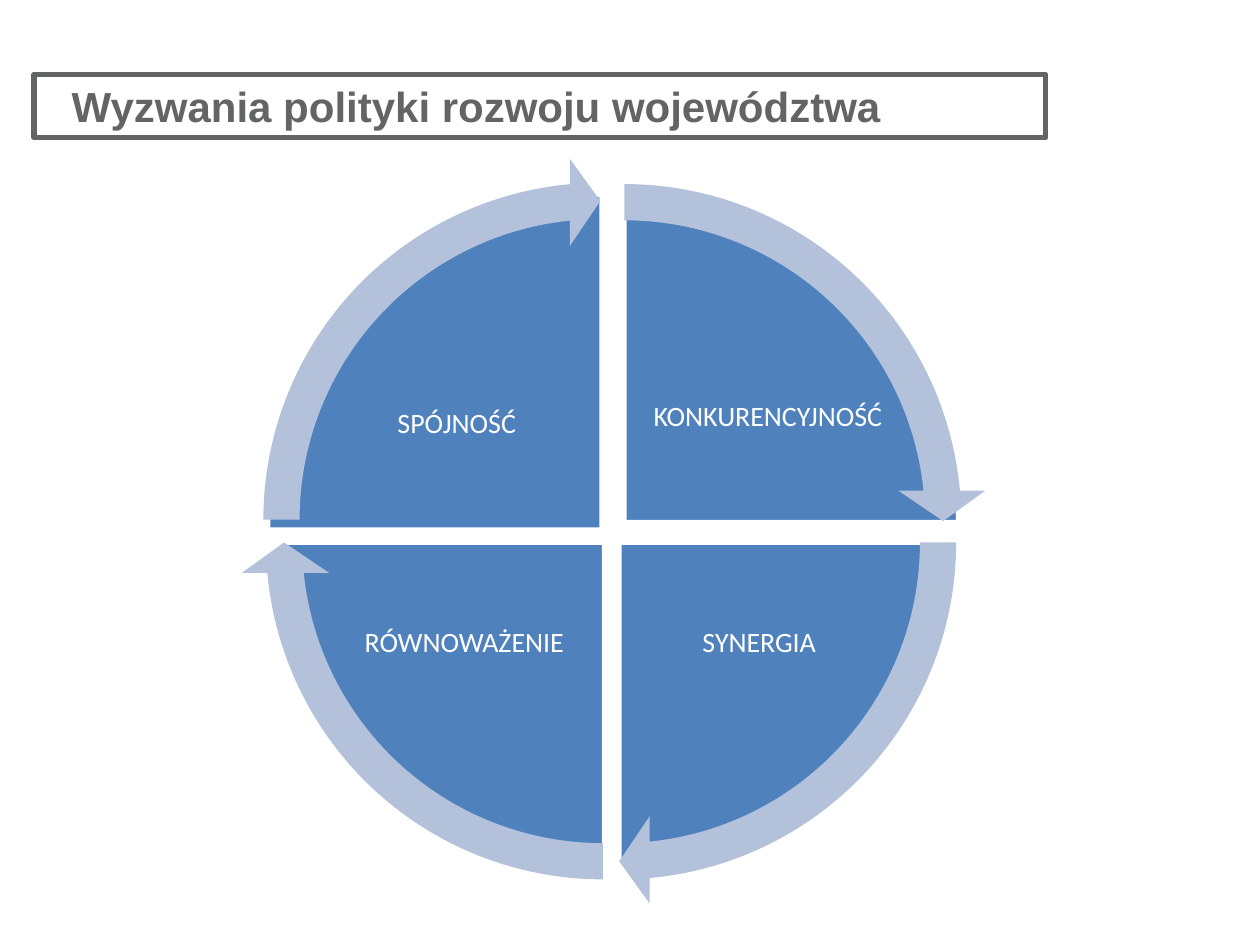
import pptx
import pptx.util
import pptx.dml.color
from dataclasses import dataclass
from pptx.enum.shapes import MSO_SHAPE
from pptx.enum.text import MSO_ANCHOR, PP_ALIGN

Pt = pptx.util.Pt


@dataclass(frozen=True)
class Theme:
    quadrant: str = "4F81BD"
    arrow: str = "B3C1DB"
    heading: str = "636466"
    light: str = "FFFFFF"
    title_font: str = "Arial"
    label_font: str = "Calibri"
    title_size: float = 24
    label_size: float = 16


THEME = Theme()
QUARTER = 54  # 90 degrees in adjustment units
ARROW_SIZE = 414

# Offsets within the cycle box: pie (left, top, width, height),
# label (left, top, width, height), arrow (left, top); clockwise from top right.
QUADRANTS = [
    ("KONKURENCYJNOŚĆ", (31, 17.3, 380.2, 381.6), (232.6, 96.5, 140.4, 104.4), (13.8, 0.7)),
    ("SYNERGIA", (33.9, 36, 368.6, 368.6), (229.8, 227.5, 136.1, 100.8), (10.9, 13)),
    ("RÓWNOWAŻENIE", (24.6, 36, 368.6, 368.6), (61.3, 227.5, 136.1, 100.8), (1.5, 13)),
    ("SPÓJNOŚĆ", (17.4, 21.6, 380.2, 381.6), (54.8, 100.1, 140.4, 104.4), (0, 0)),
]


def rgb(value):
    return pptx.dml.color.RGBColor.from_string(value)


def write(tf, text, *, font, size, color, bold=False, align=PP_ALIGN.CENTER,
          anchor=MSO_ANCHOR.MIDDLE, spacing=1.0, after=0, indent=0, inset=None):
    tf.word_wrap = True
    tf.vertical_anchor = anchor
    if inset is not None:
        tf.margin_left = tf.margin_right = tf.margin_top = tf.margin_bottom = Pt(inset)
    p = tf.paragraphs[0]
    p.alignment, p.line_spacing, p.space_after = align, spacing, Pt(after)
    if indent:
        pPr = p._p.get_or_add_pPr()
        pPr.set("marL", str(Pt(indent)))
        pPr.set("indent", "0")
    r = p.add_run()
    r.text = text
    r.font.name, r.font.size, r.font.bold = font, Pt(size), bold
    r.font.color.rgb = rgb(color)


def add_shape(shapes, kind, box, fill=None, line=None, width=0, adjustments=()):
    sp = shapes.add_shape(kind, *map(Pt, box))
    sp.shadow.inherit = False
    for i, value in enumerate(adjustments):
        sp.adjustments[i] = value
    if fill:
        sp.fill.solid()
        sp.fill.fore_color.rgb = rgb(fill)
    else:
        sp.fill.background()
    if line:
        sp.line.color.rgb = rgb(line)
        sp.line.width = Pt(width)
    else:
        sp.line.fill.background()
    return sp


def add_title(s, box, text):
    sp = add_shape(s.shapes, MSO_SHAPE.RECTANGLE, box, line=THEME.heading, width=3)
    write(sp.text_frame, text, font=THEME.title_font, size=THEME.title_size,
          color=THEME.heading, bold=True, align=PP_ALIGN.JUSTIFY,
          anchor=MSO_ANCHOR.TOP, after=6, indent=14.4)


def add_cycle(s, left, top, quadrants):
    """Four labelled quarter pies, with a ring of clockwise arrows above them."""
    shapes = s.shapes.add_group_shape().shapes

    def place(x, y, w, h):
        return left + x, top + y, w, h

    starts = [(3 + i) % 4 * QUARTER for i in range(len(quadrants))]
    for start, (text, pie, label, _) in zip(starts, quadrants):
        end = (start + QUARTER) % (4 * QUARTER)
        add_shape(shapes, MSO_SHAPE.PIE, place(*pie), fill=THEME.quadrant,
                  line=THEME.light, width=2, adjustments=(start, end))
        tb = shapes.add_textbox(*map(Pt, place(*label)))
        write(tb.text_frame, text, font=THEME.label_font, size=THEME.label_size,
              color=THEME.light, spacing=0.9, inset=1.6)
    for start, (_, _, _, corner) in zip(starts, quadrants):
        add_shape(shapes, MSO_SHAPE.CIRCULAR_ARROW,
                  place(*corner, ARROW_SIZE, ARROW_SIZE), fill=THEME.arrow,
                  adjustments=(0.05, 3.28, start + 50.73, start, 0.06))


def main():
    prs = pptx.Presentation()
    prs.slide_width, prs.slide_height = Pt(720), Pt(540)
    s = prs.slides.add_slide(prs.slide_layouts[6])
    add_cycle(s, 136, 90, QUADRANTS)
    add_title(s, (19.5, 42.5, 578, 36.3), "Wyzwania polityki rozwoju województwa")
    prs.save("out.pptx")


if __name__ == "__main__":
    main()
